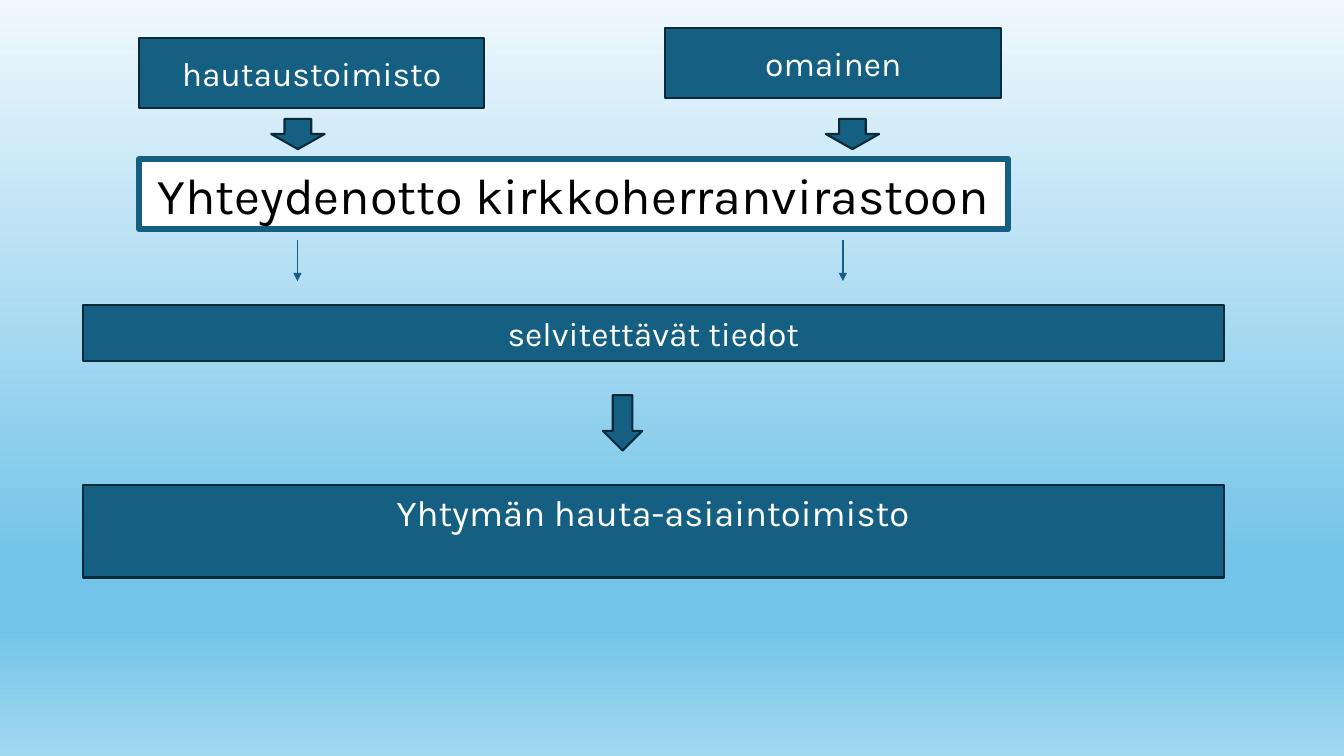
from lxml import etree
from pptx import Presentation
from pptx.dml.color import RGBColor
from pptx.enum import shapes, text
from pptx.oxml import ns
from pptx.util import Inches, Pt

COLORS = {"box": "156082", "outline": "092A39", "white": "FFFFFF", "black": "000000"}
BACKGROUND_STOPS = [(0, "F0F8FD"), (74, "74C4E9"), (83, "74C4E9"), (100, "A2D8F0")]
FONT = "Karla"


def color(name):
    return RGBColor.from_string(COLORS[name])


def paint_background(slide):
    """Fill the slide with a top-to-bottom gradient."""
    fill = slide.background.fill
    fill.gradient()
    fill.gradient_angle = 270
    stop_list = slide.element.find(".//" + ns.qn("a:gsLst"))
    for stop in list(stop_list):
        stop_list.remove(stop)
    for percent, value in BACKGROUND_STOPS:
        stop = etree.SubElement(stop_list, ns.qn("a:gs"), pos=str(percent * 1000))
        etree.SubElement(stop, ns.qn("a:srgbClr"), val=value)


def add_filled_shape(slide, kind, box, fill="box", line="outline", line_width=1.5):
    shape = slide.shapes.add_shape(kind, *map(Inches, box))
    shape.shadow.inherit = False
    shape.fill.solid()
    shape.fill.fore_color.rgb = color(fill)
    shape.line.color.rgb = color(line)
    shape.line.width = Pt(line_width)
    return shape


def add_box(slide, box, label, size=24, font_color="white",
            anchor=text.MSO_ANCHOR.MIDDLE, **style):
    """Add a rectangle with a centred label."""
    shape = add_filled_shape(slide, shapes.MSO_SHAPE.RECTANGLE, box, **style)
    frame = shape.text_frame
    frame.word_wrap = True
    frame.vertical_anchor = anchor
    paragraph = frame.paragraphs[0]
    paragraph.alignment = text.PP_ALIGN.CENTER
    run = paragraph.add_run()
    run.text = label
    run.font.name = FONT
    run.font.size = Pt(size)
    run.font.color.rgb = color(font_color)


def add_block_arrow(slide, box):
    add_filled_shape(slide, shapes.MSO_SHAPE.DOWN_ARROW, box)


def add_thin_arrow(slide, x, top, bottom):
    connector = slide.shapes.add_connector(
        shapes.MSO_CONNECTOR.STRAIGHT, Inches(x), Inches(top), Inches(x), Inches(bottom))
    connector.line.color.rgb = color("box")
    connector.line.width = Pt(1)
    properties = connector.element.spPr
    etree.SubElement(properties.find(ns.qn("a:ln")), ns.qn("a:tailEnd"), type="triangle")
    etree.SubElement(properties, ns.qn("a:effectLst"))


def add_contact_region(slide, left, top, width):
    """Place the two callers above the parish office they contact."""
    add_box(slide, (left, top + 1.3, width, 0.69), "Yhteydenotto kirkkoherranvirastoon",
            size=36, font_color="black", fill="white", line="box", line_width=4.5)
    add_box(slide, (left, top + 0.1, 3.42, 0.69), "hautaustoimisto")
    add_box(slide, (left + 5.22, top, 3.33, 0.69), "omainen")
    for arrow_offset in (1.31, 6.81):
        add_block_arrow(slide, (left + arrow_offset, top + 0.9, 0.53, 0.3))
    for arrow_offset in (1.57, 6.98):
        add_thin_arrow(slide, left + arrow_offset, top + 2.1, top + 2.51)


def add_handling_region(slide, left, top, width):
    """Place the details to clarify above the burial office that receives them."""
    add_box(slide, (left, top, width, 0.55), "selvitettävät tiedot")
    add_block_arrow(slide, (left + 5.16, top + 0.89, 0.39, 0.55))
    add_box(slide, (left, top + 1.78, width, 0.92), "Yhtymän hauta-asiaintoimisto",
            size=26, anchor=text.MSO_ANCHOR.TOP)


def main():
    presentation = Presentation()
    presentation.slide_width = Inches(13.33)
    presentation.slide_height = Inches(7.5)
    slide = presentation.slides.add_slide(presentation.slide_layouts[6])
    paint_background(slide)
    add_contact_region(slide, 1.38, 0.28, 8.62)
    add_handling_region(slide, 0.82, 3.03, 11.32)
    presentation.save("out.pptx")


if __name__ == "__main__":
    main()
